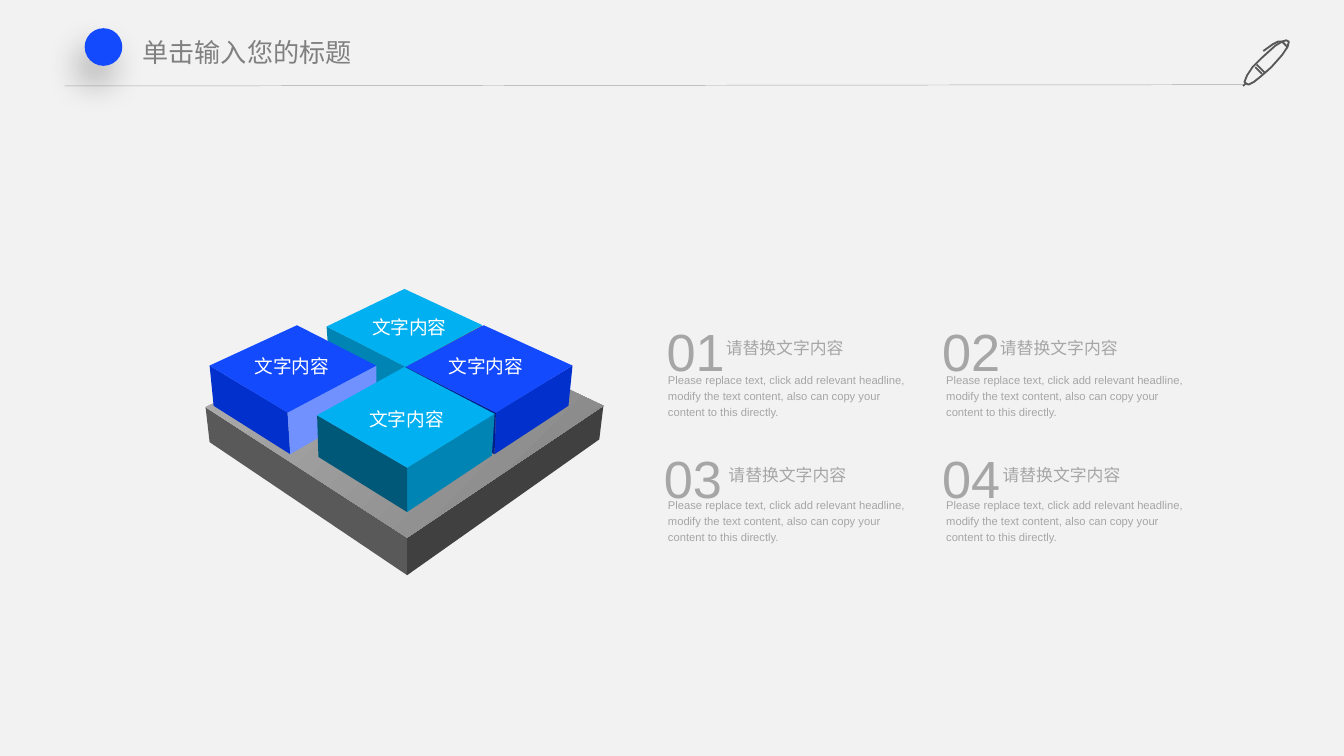
from lxml import etree
from pptx import Presentation
from pptx import util as u
from pptx.dml.color import RGBColor
from pptx.enum import shapes, text
from pptx.oxml.ns import qn

COLORS = {
    "page": "F2F2F2", "title": "808080", "text": "A6A6A6", "white": "FFFFFF",
    "pen": "595959", "left": "595959", "right": "404040", "black": "000000",
    "blue": "134AFE", "navy": "0130CC", "dark navy": "012088", "pale blue": "7192FE",
    "cyan": "00B0F0", "teal": "0084B4", "dark teal": "005878",
}
GRADIENTS = {  # start, end, clockwise angle
    "top": ("B0B0B0", "828282", 45),
    "shade": ("5E5E5E", "7F7F7F", 90),
}
SLIDE_WIDTH = u.Inches(10)
SLIDE_HEIGHT = SLIDE_WIDTH * 9 // 16
TITLE = "单击输入您的标题"
LABEL = "文字内容"
HEADING = "请替换文字内容"
BODY = ("Please replace text, click add relevant headline, modify the text content, "
        "also can copy your content to this directly.")

# Outline points are in hundredths of an inch
PEN = [
    [(939, 55), (934, 50)],
    [(935, 48), (941, 54)],
    [(959, 31), (957, 30), (954, 31), (949, 34), (939, 43), (932, 50), (928, 56), (926, 61),
     (927, 62), (929, 63), (933, 61), (938, 57), (946, 50), (954, 41), (958, 35), (959, 31)],
    [(927, 62), (925, 64)],
    [(958, 35), (954, 31), (951, 31), (947, 33), (940, 38)],
]
BLOCKS = [  # faces as (fill, corners), then the label box
    ([("left", [(156, 329), (303, 428), (303, 400), (153, 303)]),
      ("right", [(303, 400), (303, 428), (446, 327), (449, 302)]),
      ("top", [(300, 231), (153, 303), (303, 400), (449, 302)])], None),
    ([("teal", [(302, 303), (302, 273), (243, 243), (245, 271)]),
      ("shade", [(359, 242), (302, 273), (302, 303), (358, 271)]),
      ("cyan", [(359, 242), (301, 215), (243, 243), (302, 273)])], (2.63, 2.32, 0.83, 0.2)),
    ([("navy", [(216, 338), (214, 307), (156, 272), (159, 302)]),
      ("pale blue", [(216, 338), (280, 301), (280, 272), (214, 307)]),
      ("blue", [(221, 242), (156, 272), (214, 307), (280, 272)])], (1.89, 2.61, 0.56, 0.2)),
    ([("navy", [(423, 302), (426, 272), (369, 307), (368, 338)]),
      ("dark navy", [(302, 273), (302, 302), (368, 338), (369, 307)]),
      ("blue", [(360, 242), (302, 273), (369, 307), (426, 272)])], (3.23, 2.61, 0.77, 0.2)),
    ([("teal", [(368, 308), (303, 348), (303, 381), (366, 339)]),
      ("dark teal", [(303, 381), (303, 348), (236, 309), (237, 340)]),
      ("cyan", [(236, 309), (303, 348), (368, 308), (301, 273)])], (2.62, 3, 0.81, 0.2)),
]
# number, number left, heading left
ITEMS = [("01", 4.96, 5.4), ("02", 7.01, 7.44), ("03", 4.94, 5.42), ("04", 7.01, 7.46)]
COLUMNS = [(4.97, 1.81), (7.04, 1.78)]  # body left and width
ROWS = [(2.28, 2.76), (3.23, 3.69)]     # number top and body top
HEADING_DROP = 0.2


def rgb(name):
    return RGBColor.from_string(COLORS[name])


def write(box, words, size, color="text", font="Arial", align=text.PP_ALIGN.LEFT,
          spacing=1.2, before=0, wrap=True, inset=(0, 0)):
    """Fill a text box or placeholder; inset is (sides, top and bottom) in inches."""
    frame = box.text_frame
    frame.word_wrap = wrap
    frame.auto_size = text.MSO_AUTO_SIZE.NONE
    frame.vertical_anchor = text.MSO_ANCHOR.TOP
    frame.margin_left = frame.margin_right = u.Inches(inset[0])
    frame.margin_top = frame.margin_bottom = u.Inches(inset[1])
    para = frame.paragraphs[0]
    para.alignment = align
    para.line_spacing = spacing
    para.space_before = u.Pt(before)
    span = para.add_run()
    span.text = words
    span.font.size = u.Pt(size)
    span.font.name = font
    span.font.color.rgb = rgb(color)
    east_asian = etree.SubElement(span.font._element, qn("a:ea"))
    east_asian.set("typeface", font)


def add_text(parent, place, words, size, **style):
    box = parent.add_textbox(*map(u.Inches, place))
    write(box, words, size, **style)


def add_outline(parent, strokes, close):
    builder = None
    for first, *rest in strokes:
        if builder is None:
            builder = parent.build_freeform(*first, scale=u.Inches(0.01))
        else:
            builder.move_to(*first)
        builder.add_line_segments(rest, close=close)
    outline = builder.convert_to_shape()
    outline.shadow.inherit = False
    return outline


def add_face(parent, fill, corners):
    face = add_outline(parent, [corners], close=True)
    face.line.fill.background()
    if fill in GRADIENTS:
        *ends, angle = GRADIENTS[fill]
        face.fill.gradient()
        face.fill.gradient_angle = 360 - angle
        for stop, color in zip(face.fill.gradient_stops, ends):
            stop.color.rgb = RGBColor.from_string(color)
    else:
        face.fill.solid()
        face.fill.fore_color.rgb = rgb(fill)


def add_header(page):
    rule = page.shapes.add_connector(
        shapes.MSO_CONNECTOR.STRAIGHT, *map(u.Inches, (0.48, 0.64, 9.25, 0.63)))
    rule.line.color.rgb = rgb("text")
    rule.line.width = u.Pt(0.25)
    etree.SubElement(rule._element.spPr, qn("a:effectLst"))

    pen = add_outline(page.shapes, PEN, close=False)
    pen.fill.background()
    pen.line.color.rgb = rgb("pen")
    pen.line.width = u.Pt(1)

    title = page.shapes.title
    title.left, title.top, title.width, title.height = map(u.Inches, (0.97, 0.23, 2.43, 0.32))
    write(title, TITLE, 14, color="title", font="Noto Sans CJK SC", spacing=1,
          inset=(0.09, 0.04))

    dot = page.shapes.add_shape(shapes.MSO_SHAPE.OVAL, *map(u.Inches, (0.63, 0.21, 0.28, 0.28)))
    dot.fill.solid()
    dot.fill.fore_color.rgb = rgb("blue")
    dot.line.fill.background()
    dot.shadow.inherit = False
    effects = dot._element.spPr.find(qn("a:effectLst"))
    shadow = etree.SubElement(effects, qn("a:outerShdw"), blurRad=str(u.Pt(18)),
                              dist=str(u.Pt(11)), dir=str(113 * 60000),
                              algn="ctr", rotWithShape="0")
    tint = etree.SubElement(shadow, qn("a:srgbClr"), val=COLORS["black"])
    etree.SubElement(tint, qn("a:alpha"), val="27000")


def add_blocks(page):
    for faces, label_place in BLOCKS:
        group = page.shapes.add_group_shape().shapes
        for fill, corners in faces:
            add_face(group, fill, corners)
        if label_place:
            add_text(group, label_place, LABEL, 10, color="white", align=text.PP_ALIGN.CENTER)


def add_items(page):
    for index, (number, number_left, heading_left) in enumerate(ITEMS):
        row, column = divmod(index, len(COLUMNS))
        top, body_top = ROWS[row]
        body_left, body_width = COLUMNS[column]
        group = page.shapes.add_group_shape().shapes
        add_text(group, (heading_left, top + HEADING_DROP, 0.88, 0.18), HEADING, 9, wrap=False)
        add_text(group, (number_left, top, 0.44, 0.57), number, 28, wrap=False)
        add_text(group, (body_left, body_top, body_width, 0.36), BODY, 6, before=1.2)


def main():
    deck = Presentation()
    deck.slide_width, deck.slide_height = SLIDE_WIDTH, SLIDE_HEIGHT
    page = deck.slides.add_slide(deck.slide_layouts.get_by_name("Title Only"))
    page.background.fill.solid()
    page.background.fill.fore_color.rgb = rgb("page")
    add_header(page)
    add_blocks(page)
    add_items(page)
    deck.save("out.pptx")


if __name__ == "__main__":
    main()
